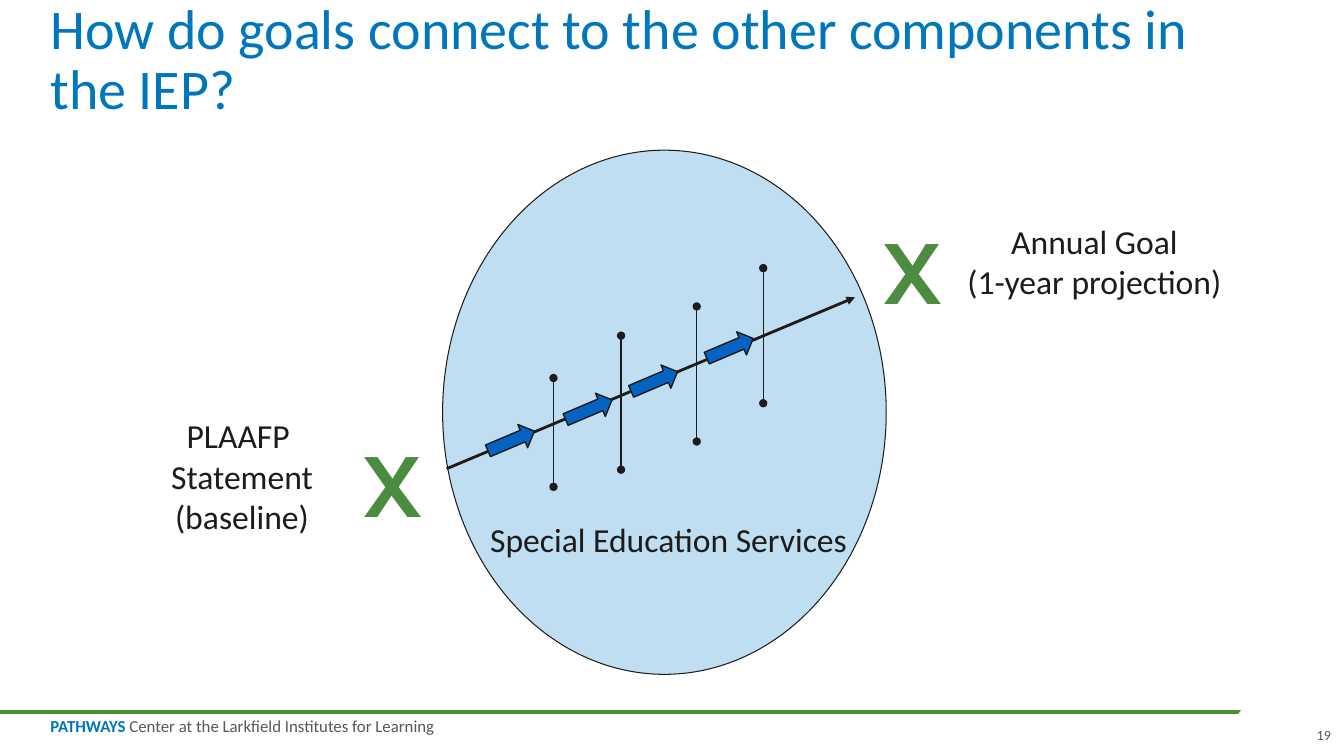
from lxml.etree import SubElement
from pptx import Presentation
from pptx.dml.color import RGBColor
from pptx.enum.shapes import MSO_CONNECTOR, MSO_SHAPE
from pptx.enum.text import MSO_ANCHOR as Anchor, MSO_AUTO_SIZE as AutoSize, PP_ALIGN as Align
from pptx.oxml.ns import qn
from pptx.util import Inches, Pt

BLUE = RGBColor(0x00, 0x76, 0xBD)
ARROW_BLUE = RGBColor(0x05, 0x63, 0xC1)
PALE_BLUE = RGBColor(0xC0, 0xDE, 0xF1)
RULE_GREEN = RGBColor(0x4C, 0x90, 0x2D)
MARK_GREEN = RGBColor(0x4C, 0x8C, 0x40)
INK = RGBColor(0x1C, 0x1C, 0x1C)
GRAY = RGBColor(0x59, 0x56, 0x5A)
WHITE = RGBColor(0xFF, 0xFF, 0xFF)


class SlideBuilder:
    label = {"name": "Calibri", "size": Pt(24), "bold": False, "color": INK}

    def __init__(self, presentation):
        self.slide = presentation.slides.add_slide(presentation.slide_layouts[5])
        self.shapes = self.slide.shapes

    def style_run(self, run, **changes):
        for key, value in {**self.label, **changes}.items():
            if key == "color":
                run.font.color.rgb = value
            else:
                setattr(run.font, key, value)

    def set_frame(self, frame, **settings):
        for key, value in settings.items():
            setattr(frame, key, value)

    def no_margins(self, frame):
        for side in ("left", "top", "right", "bottom"):
            setattr(frame, f"margin_{side}", 0)

    def title(self, text, left, top, width, height):
        title = self.shapes.title
        box = {"left": left, "top": top, "width": width, "height": height}
        for key, value in box.items():
            setattr(title, key, Inches(value))
        frame = title.text_frame
        self.no_margins(frame)
        self.set_frame(frame, text=text, word_wrap=True, auto_size=AutoSize.NONE,
                       vertical_anchor=Anchor.BOTTOM)
        paragraph = frame.paragraphs[0]
        paragraph.alignment = Align.LEFT
        paragraph.line_spacing = 0.9
        self.style_run(paragraph.runs[0], size=Pt(40), color=BLUE)

    def text(self, paragraphs, box, align=Align.CENTER, wrap=False, inset=True,
             anchor=Anchor.TOP, spacing=None, **font):
        frame = self.shapes.add_textbox(*map(Inches, box)).text_frame
        self.set_frame(frame, word_wrap=wrap, auto_size=AutoSize.SHAPE_TO_FIT_TEXT,
                       vertical_anchor=anchor)
        if not inset:
            self.no_margins(frame)
        for index, runs in enumerate(paragraphs):
            paragraph = frame.add_paragraph() if index else frame.paragraphs[0]
            paragraph.alignment = align
            paragraph.line_spacing = spacing
            for text, changes in runs:
                run = paragraph.add_run()
                run.text = text
                self.style_run(run, **{**font, **changes})

    def shape(self, kind, box, fill, line=None, rotation=0):
        shape = self.shapes.add_shape(kind, *map(Inches, box))
        shape.shadow.inherit = False
        shape.rotation = rotation
        shape.fill.solid()
        shape.fill.fore_color.rgb = fill
        if line:
            shape.line.color.rgb = INK
            shape.line.width = Pt(line)
        else:
            shape.line.fill.background()

    def line(self, start, end, width, color=INK, head=None, tail=None):
        connector = self.shapes.add_connector(
            MSO_CONNECTOR.STRAIGHT, *map(Inches, (*start, *end)))
        connector.line.color.rgb = color
        connector.line.width = Pt(width)
        outline = connector.line._get_or_add_ln()
        for tag, kind in (("a:headEnd", head), ("a:tailEnd", tail)):
            if kind:
                SubElement(outline, qn(tag), type=kind)
        SubElement(connector._element.spPr, qn("a:effectLst"))


def main():
    presentation = Presentation()
    presentation.slide_width = Inches(13.33)
    presentation.slide_height = Inches(7.5)
    builder = SlideBuilder(presentation)

    builder.line((0, 7.06), (13, 7.06), 3, RULE_GREEN)
    builder.text(
        [[("PATHWAYS", {"color": BLUE, "bold": True}),
          (" Center at the Larkfield Institutes for Learning", {})]],
        (0.5, 7.13, 4.02, 0.17), Align.LEFT, inset=False, spacing=0.85,
        size=Pt(12), color=GRAY)
    builder.shape(MSO_SHAPE.OVAL, (12.16, 6.77, 1.19, 0.58), WHITE, rotation=332.1)

    builder.title("How do goals connect to the other components in the IEP?",
                  0.5, 0, 11.4, 1.21)
    builder.text([[("19", {})]], (13.03, 7.2, 0.17, 0.17), Align.RIGHT, inset=False,
                 anchor=Anchor.BOTTOM, size=Pt(10), color=GRAY)

    builder.shape(MSO_SHAPE.OVAL, (4.39, 1.49, 4.4, 5.2), PALE_BLUE, 0.75)
    for lines, box, align in (
        (["Special Education Services"], (4.68, 5.1, 3.82, 0.5), Align.RIGHT),
        (["PLAAFP ", "Statement", "(baseline)"], (1.59, 4.07, 1.62, 1.31), Align.CENTER),
        (["Annual Goal", "(1-year projection)"], (9.48, 2.14, 2.75, 0.91), Align.CENTER),
    ):
        builder.text([[(line, {})] for line in lines], box, align)

    for x, top, bottom in ((5.49, 3.75, 4.83), (6.16, 3.33, 4.66),
                           (6.91, 3.04, 4.38), (7.57, 2.66, 4)):
        builder.line((x, top), (x, bottom), 1, head="oval", tail="oval")
    builder.line((4.43, 4.65), (8.48, 2.95), 2, tail="triangle")
    for left, top in ((4.82, 4.25), (5.59, 3.94), (6.24, 3.66), (6.99, 3.33)):
        builder.shape(MSO_SHAPE.RIGHT_ARROW, (left, top, 0.5, 0.25), ARROW_BLUE, 1, 337)

    for left, top in ((3.49, 4.17), (8.64, 2.06)):
        builder.text([[("X", {})]], (left, top, 0.57, 1.21), Align.LEFT, wrap=True,
                     name="Karla", size=Pt(66), bold=True, color=MARK_GREEN)

    presentation.save("out.pptx")


if __name__ == "__main__":
    main()
